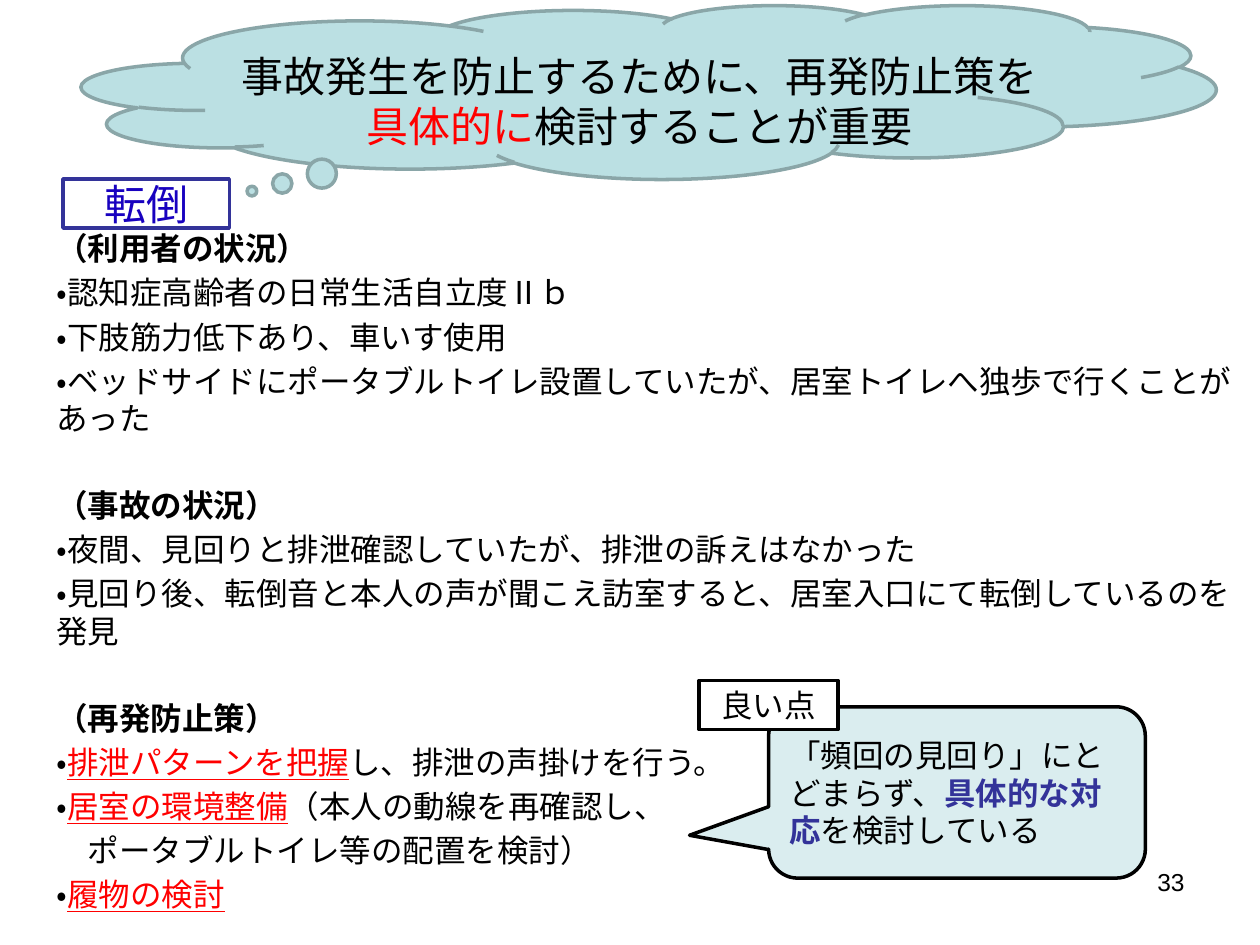
from dataclasses import dataclass
from typing import NamedTuple

from pptx import Presentation
from pptx.dml.color import RGBColor as Rgb
from pptx.enum.lang import MSO_LANGUAGE_ID as Lang
from pptx.enum.shapes import MSO_SHAPE as Kind
from pptx.enum.text import MSO_ANCHOR as Anchor, PP_ALIGN as Align
from pptx.util import Inches, Pt

COLS, ROWS = 100, 75


@dataclass(frozen=True)
class Theme:
    font: str = "Arial"
    ink: str = "000000"
    paper: str = "FFFFFF"
    red: str = "FF0000"
    navy: str = "333399"
    blue: str = "1801BF"
    sky: str = "BBE0E3"
    mist: str = "DAEDEF"
    edge: str = "8AA6A8"
    small: int = 14
    body: int = 18
    large: int = 24
    step: float = 3.6
    gap: float = 28
    line: float = 2


class Box(NamedTuple):
    col: float
    row: float
    wide: float
    high: float


class Span(NamedTuple):
    text: str
    color: str = Theme.ink
    bold: bool = False
    under: bool = False


class Para(NamedTuple):
    spans: tuple[Span, ...]
    before: float = 0


class Panel(NamedTuple):
    kind: Kind
    box: Box
    fill: str
    edge: str
    adj: tuple[float, ...] = ()
    spans: tuple[Span, ...] = ()
    size: int = Theme.body
    align: Align = Align.CENTER


class Part(NamedTuple):
    head: str
    items: tuple[tuple[Span, ...], ...]


def place(box: Box) -> tuple[int, ...]:
    wide, high = deck.slide_width / COLS, deck.slide_height / ROWS
    return tuple(int(n * u) for n, u in zip(box, (wide, high) * 2))


def write(shape, paras: list[Para], *, size: int = Theme.body,
          align: Align = Align.LEFT, anchor: Anchor = Anchor.TOP,
          top: float = 0.05) -> None:
    frame = shape.text_frame
    frame.word_wrap = True
    frame.vertical_anchor = anchor
    frame.margin_top = Inches(top)
    for i, para in enumerate(paras):
        p = frame.add_paragraph() if i else frame.paragraphs[0]
        p.alignment = align
        p.space_before = Pt(para.before)
        for span in para.spans:
            run = p.add_run()
            run.text = span.text.rstrip("\n")
            font = run.font
            font.name, font.size = Theme.font, Pt(size)
            font.bold, font.underline = span.bold, span.under
            font.color.rgb = Rgb.from_string(span.color)
            font.language_id = Lang.JAPANESE
            if span.text.endswith("\n"):
                p.add_line_break()


def label(box: Box, paras: list[Para], **form) -> None:
    write(slide.shapes.add_textbox(*place(box)), paras, **form)


def draw(panel: Panel) -> None:
    shape = slide.shapes.add_shape(panel.kind, *place(panel.box))
    shape.shadow.inherit = False
    shape.fill.solid()
    shape.fill.fore_color.rgb = Rgb.from_string(panel.fill)
    shape.line.color.rgb = Rgb.from_string(panel.edge)
    shape.line.width = Pt(Theme.line)
    for i, value in enumerate(panel.adj):
        shape.adjustments[i] = value
    if panel.spans:
        write(shape, [Para(panel.spans)], size=panel.size,
              align=panel.align, anchor=Anchor.MIDDLE)


def flow(parts: list[Part]) -> list[Para]:
    paras = []
    for part in parts:
        before = Theme.gap if paras else 0
        paras.append(Para((Span(part.head, bold=True),), before))
        paras += [Para(item, Theme.step) for item in part.items]
    return paras


def key(text: str, rest: str = "") -> tuple[Span, ...]:
    spans = Span("・"), Span(text, Theme.red, under=True)
    return spans + ((Span(rest),) if rest else ())


PARTS = [
    Part("（利用者の状況）", (
        (Span("・認知症高齢者の日常生活自立度Ⅱｂ"),),
        (Span("・下肢筋力低下あり、車いす使用"),),
        (Span("・ベッドサイドにポータブルトイレ設置していたが、"
              "居室トイレへ独歩で行くことがあった"),))),
    Part("（事故の状況）", (
        (Span("・夜間、見回りと排泄確認していたが、排泄の訴えはなかった"),),
        (Span("・見回り後、転倒音と本人の声が聞こえ訪室すると、"
              "居室入口にて転倒しているのを発見"),))),
    Part("（再発防止策）", (
        key("排泄パターンを把握", "し、排泄の声掛けを行う。"),
        key("居室の環境整備", "（本人の動線を再確認し、"),
        (Span("　ポータブルトイレ等の配置を検討）"),),
        key("履物の検討"))),
]
TITLE = (Span("事故発生を防止するために、再発防止策を\n"),
         Span("具体的に", Theme.red), Span("検討することが重要"))
CLOUD = Panel(Kind.CLOUD_CALLOUT, Box(6.5, 0.4, 90, 13.8),
              Theme.sky, Theme.edge, (-0.35, 0.57))
PANELS = [
    Panel(Kind.RECTANGLE, Box(5, 14.2, 13.2, 3.9), Theme.paper, Theme.navy,
          spans=(Span("転倒", Theme.blue),), size=Theme.large),
    Panel(Kind.ROUNDED_RECTANGULAR_CALLOUT, Box(61, 56.1, 29.9, 13.6),
          Theme.mist, Theme.ink, (-0.71, 0.25, 0.17),
          (Span("「頻回の見回り」にとどまらず、"),
           Span("具体的な対応", Theme.navy, bold=True),
           Span("を検討している")), align=Align.LEFT),
    Panel(Kind.RECTANGLE, Box(55.5, 54, 11, 3.9), Theme.paper, Theme.ink,
          spans=(Span("良い点"),)),
]

deck = Presentation()
deck.slide_width, deck.slide_height = Inches(10), Inches(7.5)
slide = deck.slides.add_slide(deck.slide_layouts[6])

label(Box(71.7, 68.3, 23.3, 5.2), [Para((Span("33"),))],
      size=Theme.small, align=Align.RIGHT)
label(Box(3.5, 13.8, 95.3, 59.8), flow(PARTS), top=0.44)
draw(CLOUD)
label(Box(5, 2.2, 91.5, 11.6), [Para(TITLE)], size=Theme.large,
      align=Align.CENTER, anchor=Anchor.MIDDLE)
for panel in PANELS:
    draw(panel)

deck.save("out.pptx")
